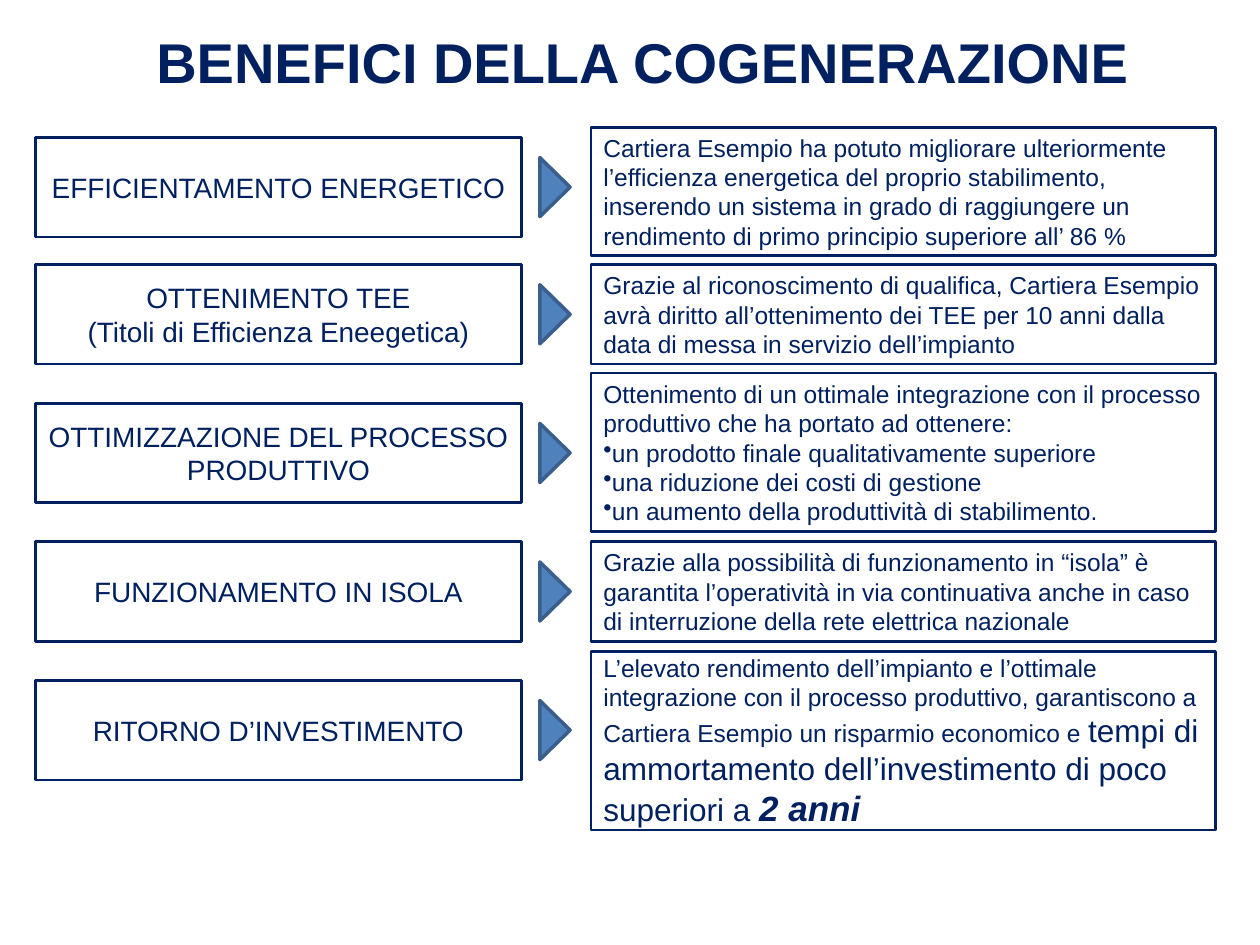
import pptx
import pptx.util
import pptx.dml.color
import pptx.enum.shapes
import pptx.enum.text
import pptx.oxml

Pt = pptx.util.Pt
SHAPES = pptx.enum.shapes.MSO_SHAPE
ALIGN = pptx.enum.text.PP_ALIGN
ANCHOR = pptx.enum.text.MSO_ANCHOR
NAVY = "002060"


def color(hex_value):
    return pptx.dml.color.RGBColor.from_string(hex_value)


def add_outlined(kind, left, top, width, height, line_color, line_width):
    shape = slide.shapes.add_shape(kind, Pt(left), Pt(top), Pt(width), Pt(height))
    shape.shadow.inherit = False
    shape.fill.background()
    shape.line.color.rgb = color(line_color)
    shape.line.width = Pt(line_width)
    return shape


presentation = pptx.Presentation()
presentation.slide_width, presentation.slide_height = Pt(720), Pt(540)
slide = presentation.slides.add_slide(presentation.slide_layouts[5])

# Title
title = slide.shapes.title
title.left, title.top, title.width, title.height = Pt(82.1), Pt(9.4), Pt(595.4), Pt(73.4)
title_format = {"vertical_anchor": ANCHOR.TOP, "word_wrap": True, "margin_top": Pt(6.2),
                "auto_size": pptx.enum.text.MSO_AUTO_SIZE.NONE}
for name, value in title_format.items():
    setattr(title.text_frame, name, value)
title.text_frame.text = "BENEFICI DELLA COGENERAZIONE"
paragraph = title.text_frame.paragraphs[0]
paragraph.alignment = ALIGN.LEFT
for name, value in {"name": "Arial", "size": Pt(32), "bold": True}.items():
    setattr(paragraph.font, name, value)
paragraph.font.color.rgb = color(NAVY)

# Rows: label top, label lines, text top, text height, text paragraphs made of (text, format) runs
BODY = {"size": Pt(14)}
LARGE = {"size": Pt(18)}
STRONG = {"size": Pt(20), "bold": True, "italic": True}
LABEL = {"size": Pt(16)}
BULLET = "•"
rows = [
    (78.5, ["EFFICIENTAMENTO ENERGETICO"], 72.7, 73.4,
     [[("Cartiera Esempio ha potuto migliorare ulteriormente l’efficienza energetica del "
        "proprio stabilimento, inserendo un sistema in grado di raggiungere un rendimento "
        "di primo principio superiore all’ 86 %", BODY)]]),
    (151.2, ["OTTENIMENTO TEE", "(Titoli di Efficienza Eneegetica)"], 151.2, 56.9,
     [[("Grazie al riconoscimento di qualifica, Cartiera Esempio avrà diritto "
        "all’ottenimento dei TEE per 10 anni dalla data di messa in servizio "
        "dell’impianto", BODY)]]),
    (230.4, ["OTTIMIZZAZIONE DEL PROCESSO PRODUTTIVO"], 213.1, 90.7,
     [[("Ottenimento di un ottimale integrazione con il processo produttivo che ha "
        "portato ad ottenere:", BODY)],
      [BULLET, ("un prodotto finale qualitativamente superiore", BODY)],
      [BULLET, ("una riduzione dei costi di gestione", BODY)],
      [BULLET, ("un aumento della produttività di stabilimento.", BODY)]]),
    (309.6, ["FUNZIONAMENTO IN ISOLA"], 309.6, 56.9,
     [[("Grazie alla possibilità di funzionamento in “isola” è garantita l’operatività in "
        "via continuativa anche in caso di interruzione della rete elettrica "
        "nazionale", BODY)]]),
    (388.8, ["RITORNO D’INVESTIMENTO"], 372.2, 102.2,
     [[("L’elevato rendimento dell’impianto e l’ottimale integrazione con il processo "
        "produttivo, garantiscono a Cartiera Esempio un risparmio economico e ", BODY),
       ("tempi di ammortamento dell’investimento di poco superiori a ", LARGE),
       ("2 anni", STRONG)]]),
]
LABEL_HEIGHT = 56.9
ARROW_WIDTH, ARROW_HEIGHT = 33.8, 17.3

for label_top, label_lines, text_top, text_height, text_paragraphs in rows:
    # Label and explanation boxes
    label_paragraphs = [[(line, LABEL)] for line in label_lines]
    boxes = [
        (20.2, label_top, 277.9, LABEL_HEIGHT, ALIGN.CENTER, label_paragraphs),
        (337.7, text_top, 357.1, text_height, ALIGN.LEFT, text_paragraphs),
    ]
    for left, top, width, height, alignment, paragraphs in boxes:
        shape = add_outlined(SHAPES.RECTANGLE, left, top, width, height, NAVY, 1.5)
        frame = shape.text_frame
        frame.word_wrap = True
        frame.vertical_anchor = ANCHOR.MIDDLE
        for index, runs in enumerate(paragraphs):
            paragraph = frame.add_paragraph() if index else frame.paragraphs[0]
            paragraph.alignment = alignment
            if runs[0] == BULLET:
                properties = paragraph._p.get_or_add_pPr()
                properties.set("marL", "0")
                properties.set("indent", str(Pt(-28)))
                bullet = pptx.oxml.parse_xml(
                    '<a:buChar xmlns:a="http://schemas.openxmlformats.org/drawingml/2006/main"'
                    f' char="{BULLET}"/>')
                properties.append(bullet)
                runs = runs[1:]
            for text, run_format in runs:
                run = paragraph.add_run()
                run.text = text
                for name, value in {"name": "Arial", **run_format}.items():
                    setattr(run.font, name, value)
                run.font.color.rgb = color(NAVY)

    # Arrow, centred on the label
    arrow_top = label_top + (LABEL_HEIGHT - ARROW_HEIGHT) / 2
    arrow = add_outlined(SHAPES.ISOSCELES_TRIANGLE, 300.2, arrow_top,
                         ARROW_WIDTH, ARROW_HEIGHT, "3A5F8C", 2)
    arrow.rotation = 90
    arrow.fill.solid()
    arrow.fill.fore_color.rgb = color("4F81BD")

presentation.save("out.pptx")
